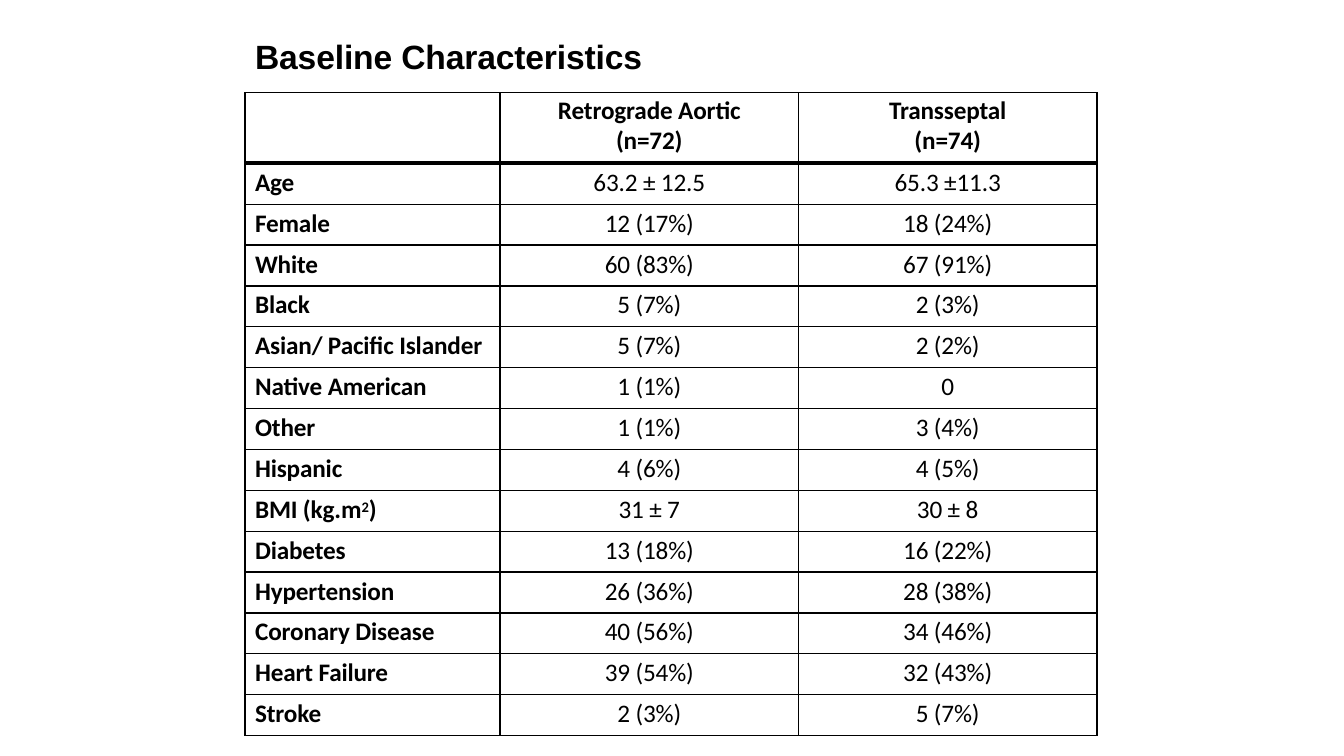
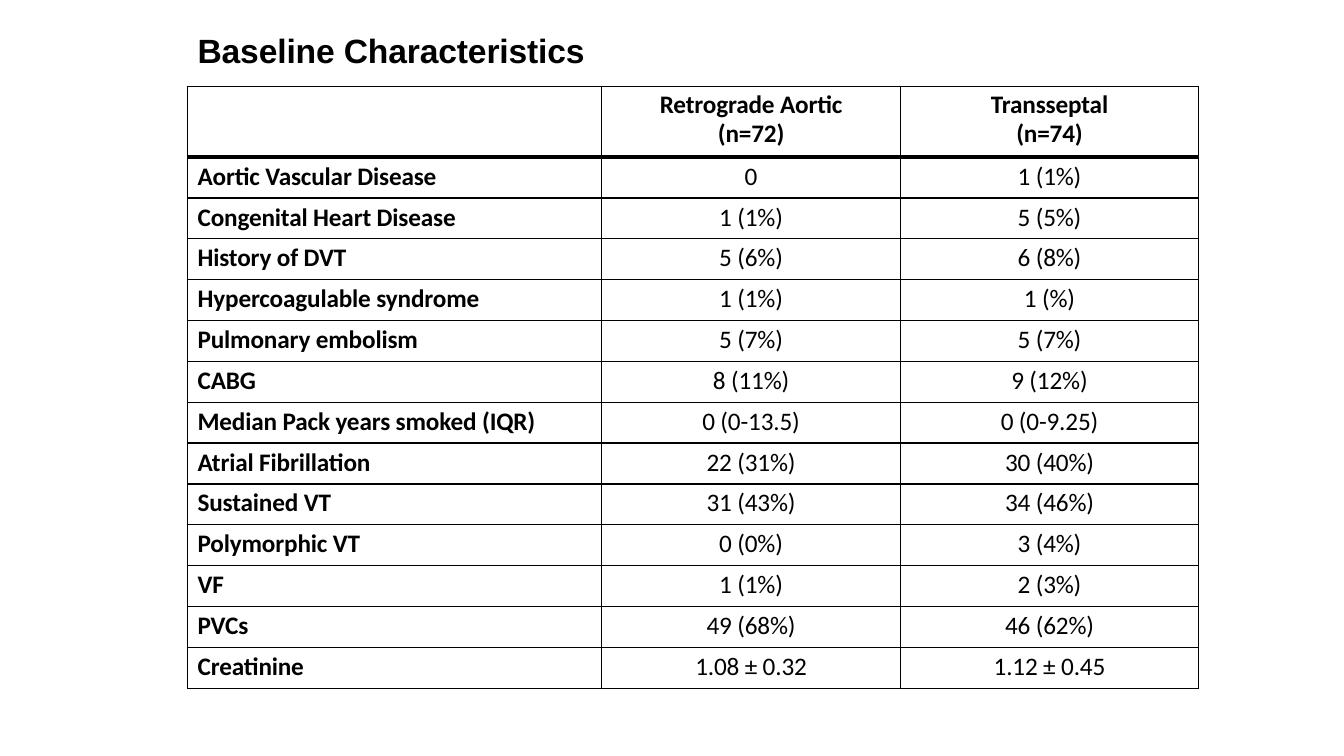
"""Build two slides of baseline characteristics by treatment arm."""
import lxml.etree
import pptx
import pptx.dml.color
import pptx.enum.text
import pptx.oxml.ns
import pptx.util

Inches = pptx.util.Inches
Pt = pptx.util.Pt
ALIGN = pptx.enum.text.PP_ALIGN
BLACK = pptx.dml.color.RGBColor(0x00, 0x00, 0x00)
WHITE = pptx.dml.color.RGBColor(0xFF, 0xFF, 0xFF)

TITLE = "Baseline Characteristics"
ARMS = [("Retrograde Aortic", "(n=72)"), ("Transseptal", "(n=74)")]
SLIDES = [
    {
        "left": 2.43, "top": 0.92, "height": 6.38, "label_width": 2.53,
        "rows": [
            ("Age", "63.2 ± 12.5", "65.3 ±11.3"),
            ("Female", "12 (17%)", "18 (24%)"),
            ("White", "60 (83%)", "67 (91%)"),
            ("Black", "5 (7%)", "2 (3%)"),
            ("Asian/ Pacific Islander", "5 (7%)", "2 (2%)"),
            ("Native American", "1 (1%)", "0"),
            ("Other", "1 (1%)", "3 (4%)"),
            ("Hispanic", "4 (6%)", "4 (5%)"),
            ("BMI (kg.m^2)", "31 ± 7", "30 ± 8"),
            ("Diabetes", "13 (18%)", "16 (22%)"),
            ("Hypertension", "26 (36%)", "28 (38%)"),
            ("Coronary Disease", "40 (56%)", "34 (46%)"),
            ("Heart Failure", "39 (54%)", "32 (43%)"),
            ("Stroke", "2 (3%)", "5 (7%)"),
        ],
    },
    {
        "left": 1.86, "top": 0.86, "height": 5.97, "label_width": 4.11,
        "rows": [
            ("Aortic Vascular Disease", "0", "1 (1%)"),
            ("Congenital Heart Disease", "1 (1%)", "5 (5%)"),
            ("History of DVT", "5 (6%)", "6 (8%)"),
            ("Hypercoagulable syndrome", "1 (1%)", "1 (%)"),
            ("Pulmonary embolism", "5 (7%)", "5 (7%)"),
            ("CABG", "8 (11%)", "9 (12%)"),
            ("Median Pack years smoked (IQR)", "0 (0-13.5)", "0 (0-9.25)"),
            ("Atrial Fibrillation", "22 (31%)", "30 (40%)"),
            ("Sustained VT", "31 (43%)", "34 (46%)"),
            ("Polymorphic VT", "0 (0%)", "3 (4%)"),
            ("VF", "1 (1%)", "2 (3%)"),
            ("PVCs", "49 (68%)", "46 (62%)"),
            ("Creatinine", "1.08 ± 0.32", "1.12 ± 0.45"),
        ],
    },
]

ARM_WIDTH = Inches(2.96)
HEADER_HEIGHT = Inches(0.7)
THIN, THICK = Pt(1), Pt(3)
TITLE_FONT = {"name": "Arial", "size": Pt(24), "bold": True}
LABEL_FONT = {"name": "Calibri", "size": Pt(18), "bold": True}
VALUE_FONT = {**LABEL_FONT, "bold": False}
NO_MARGINS = {"margin_left": 0, "margin_right": 0, "margin_top": 0, "margin_bottom": 0}
TITLE_FRAME = {**NO_MARGINS, "word_wrap": True}
LABEL_CELL = {**NO_MARGINS, "margin_left": Inches(0.1), "margin_top": Inches(0.04)}
VALUE_CELL = {**LABEL_CELL, "margin_left": 0}
TITLE_LINE = {"space_before": Pt(1), "alignment": ALIGN.LEFT}
LABEL_LINE = {"space_before": Pt(2.5), "alignment": ALIGN.LEFT}
VALUE_LINE = {**LABEL_LINE, "alignment": ALIGN.CENTER}
HEADER_LINE = {**VALUE_LINE, "space_before": Pt(3.6), "line_spacing": Pt(21.1)}


def apply_format(target, values):
    for name, value in values.items():
        setattr(target, name, value)


def write_run(paragraph, text, font, baseline=0):
    run = paragraph.add_run()
    run.text = text
    apply_format(run.font, font)
    run.font.color.rgb = BLACK
    properties = run.font._element
    properties.set("spc", "-10")
    if baseline:
        properties.set("baseline", str(baseline))


def write_text(paragraph, text, font, line):
    apply_format(paragraph, line)
    base, _, raised = text.partition("^")
    write_run(paragraph, base, font)
    if raised:
        write_run(paragraph, raised[0], font, 23000)
        write_run(paragraph, raised[1:], font)


def draw_borders(cell, top, bottom):
    properties = cell._tc.get_or_add_tcPr()
    for side, width in (("L", THIN), ("R", THIN), ("T", top), ("B", bottom)):
        border = lxml.etree.SubElement(
            properties, pptx.oxml.ns.qn(f"a:ln{side}"), w=str(width))
        fill = lxml.etree.SubElement(border, pptx.oxml.ns.qn("a:solidFill"))
        lxml.etree.SubElement(fill, pptx.oxml.ns.qn("a:srgbClr"), val=str(BLACK))


def add_title(slide, left, top):
    frame = slide.shapes.add_textbox(left, top, Inches(6), Inches(0.43)).text_frame
    apply_format(frame, TITLE_FRAME)
    write_text(frame.paragraphs[0], TITLE, TITLE_FONT, TITLE_LINE)


def add_characteristics(slide, content, left, top):
    rows = content["rows"]
    height = Inches(content["height"])
    widths = [Inches(content["label_width"])] + [ARM_WIDTH] * len(ARMS)
    table = slide.shapes.add_table(
        len(rows) + 1, len(widths), left, top, sum(widths), height).table
    apply_format(table, {"first_row": False, "horz_banding": False})
    for column, width in zip(table.columns, widths):
        column.width = width
    for index, row in enumerate(table.rows):
        row.height = (height - HEADER_HEIGHT) // len(rows) if index else HEADER_HEIGHT
        for cell in row.cells:
            draw_borders(cell, THICK if index == 1 else THIN, THIN if index else THICK)
            cell.fill.solid()
            cell.fill.fore_color.rgb = WHITE

    for column, (arm, size) in enumerate(ARMS, 1):
        cell = table.cell(0, column)
        apply_format(cell, VALUE_CELL)
        paragraph = cell.text_frame.paragraphs[0]
        write_text(paragraph, arm, LABEL_FONT, HEADER_LINE)
        paragraph.add_line_break()
        write_run(paragraph, size, LABEL_FONT)

    for index, row in enumerate(rows, 1):
        for column, text in enumerate(row):
            cell = table.cell(index, column)
            layout, font, line = (
                (VALUE_CELL, VALUE_FONT, VALUE_LINE) if column
                else (LABEL_CELL, LABEL_FONT, LABEL_LINE))
            apply_format(cell, layout)
            write_text(cell.text_frame.paragraphs[0], text, font, line)


def main():
    deck = pptx.Presentation()
    deck.slide_width, deck.slide_height = Inches(13.33), Inches(7.5)
    for content in SLIDES:
        slide = deck.slides.add_slide(deck.slide_layouts[6])
        left, top = Inches(content["left"]), Inches(content["top"])
        add_characteristics(slide, content, left, top)
        add_title(slide, left + Inches(0.1), top - Inches(0.56))
    deck.save("out.pptx")


if __name__ == "__main__":
    main()
